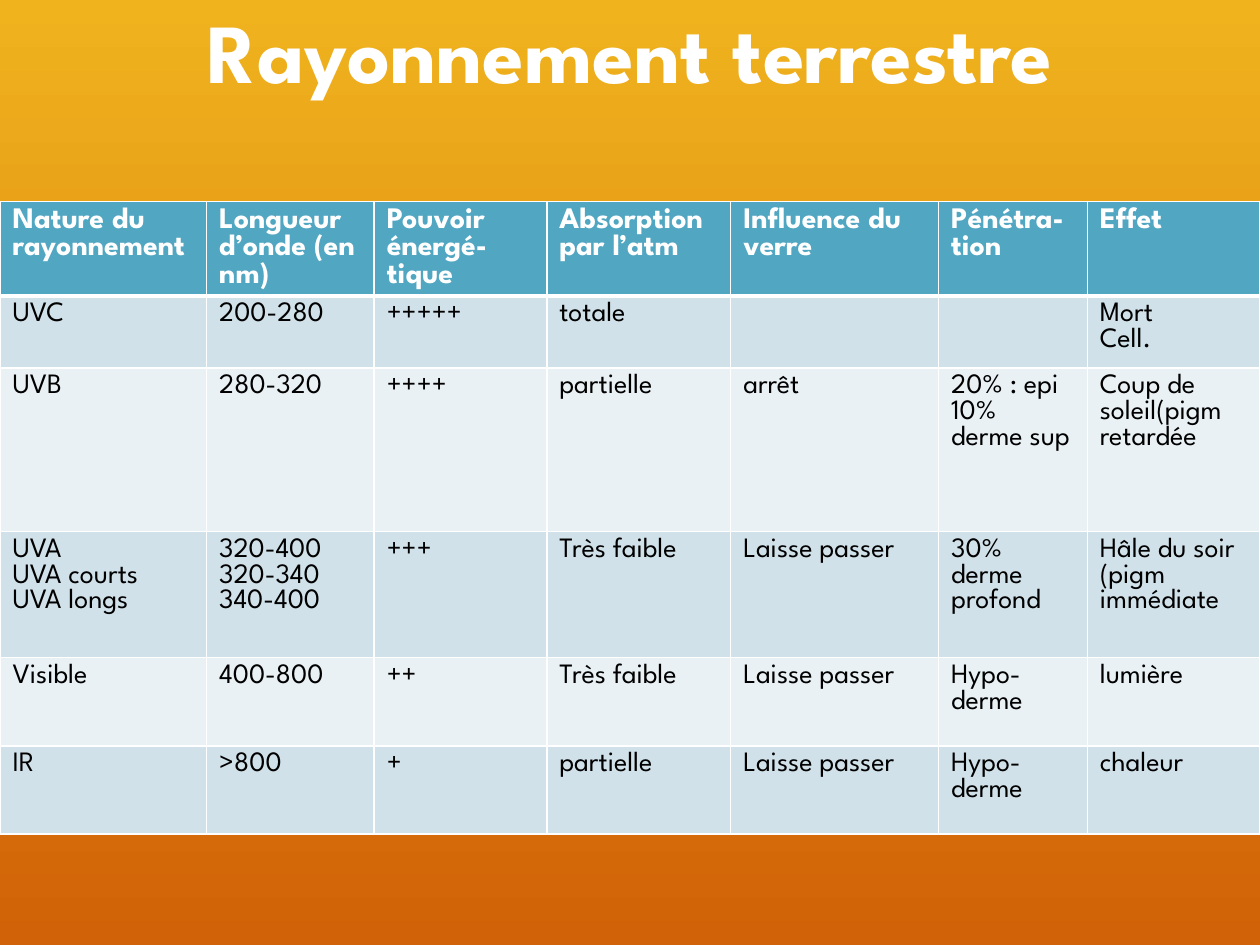
from dataclasses import dataclass

from lxml import etree
from pptx import Presentation
from pptx.dml.color import RGBColor
from pptx.enum.text import MSO_ANCHOR, PP_ALIGN
from pptx.oxml.ns import qn
from pptx.util import Emu, Inches, Pt

CENTER = PP_ALIGN.CENTER
MIDDLE = MSO_ANCHOR.MIDDLE
FONT = "League Spartan"
WHITE = "FFFFFF"
BLACK = "000000"
SKY_TOP, SKY_BOTTOM = "F0B31E", "D16207"
HEADER_FILL = "51A6C2"
BAND_FILLS = ("D0E1E9", "E9F1F4")
THIN, THICK = 1, 3
COLUMN_SHARES = (0.164, 0.133, 0.137, 0.146, 0.165, 0.118, 0.137)
HEADINGS = (
    "Nature du rayonnement", "Longueur d’onde (en nm)", "Pouvoir énergé-tique",
    "Absorption par l’atm", "Influence du verre", "Pénétra-tion", "Effet",
)


@dataclass(frozen=True)
class TextStyle:
    size: float
    color: str
    bold: bool


@dataclass(frozen=True)
class TableRow:
    height: float
    texts: tuple[str, ...]


TITLE = TextStyle(48, WHITE, True)
HEADING = TextStyle(17, WHITE, True)
BODY = TextStyle(16, BLACK, False)
ROWS = (
    TableRow(0.75, HEADINGS),
    TableRow(0.57, ("UVC", "200-280", "+++++", "totale", "", "", "Mort\nCell.")),
    TableRow(1.3, ("UVB", "280-320", "++++", "partielle", "arrêt",
                   "20% : epi\n10% derme sup", "Coup de soleil(pigm retardée")),
    TableRow(1, ("UVA\nUVA courts\nUVA longs", "320-400\n320-340\n340-400", "+++",
                 "Très faible", "Laisse passer", "30% derme profond",
                 "Hâle du soir (pigm immédiate")),
    TableRow(0.7, ("Visible", "400-800", "++", "Très faible", "Laisse passer",
                   "Hypo-derme", "lumière")),
    TableRow(0.7, ("IR", ">800", "+", "partielle", "Laisse passer",
                   "Hypo-derme", "chaleur")),
)


def rgb(value: str) -> RGBColor:
    return RGBColor.from_string(value)


def write(para, text: str, style: TextStyle) -> None:
    span = para.add_run()
    span.text = text
    span.font.name = FONT
    span.font.size = Pt(style.size)
    span.font.bold = style.bold
    span.font.color.rgb = rgb(style.color)


def paint_background(page) -> None:
    fill = page.background.fill
    fill.gradient()
    fill.gradient_angle = 270
    for stop, position, color in zip(fill.gradient_stops, (0, 1), (SKY_TOP, SKY_BOTTOM)):
        stop.position = position
        stop.color.rgb = rgb(color)


def draw_title(page, deck_width: int, deck_height: int) -> None:
    box = page.shapes.title
    box.left, box.top = Emu(int(deck_width * 0.085)), Emu(0)
    box.width, box.height = Emu(int(deck_width * 0.83)), Emu(int(deck_height * 0.115))
    box.text_frame.vertical_anchor = MIDDLE
    para = box.text_frame.paragraphs[0]
    para.alignment = CENTER
    para.line_spacing = 0.95
    write(para, "Rayonnement terrestre", TITLE)


def set_borders(cell, top: float, bottom: float) -> None:
    properties = cell._tc.get_or_add_tcPr()
    for side, width in (("L", THIN), ("R", THIN), ("T", top), ("B", bottom)):
        line = etree.SubElement(properties, qn(f"a:ln{side}"), w=str(Pt(width)))
        solid = etree.SubElement(line, qn("a:solidFill"))
        etree.SubElement(solid, qn("a:srgbClr"), val=WHITE)


def fill_cell(cell, text: str, row_index: int) -> None:
    is_header = row_index == 0
    set_borders(cell, THICK if row_index == 1 else THIN, THICK if is_header else THIN)
    cell.fill.solid()
    cell.fill.fore_color.rgb = rgb(HEADER_FILL if is_header else BAND_FILLS[(row_index - 1) % 2])
    frame = cell.text_frame
    for index, line in enumerate(text.split("\n") if text else ()):
        para = frame.add_paragraph() if index else frame.paragraphs[0]
        write(para, line, HEADING if is_header else BODY)


def draw_table(page, deck_width: int) -> None:
    height = Inches(sum(row.height for row in ROWS))
    table = page.shapes.add_table(
        len(ROWS), len(HEADINGS), 0, Inches(1.6), deck_width, height).table
    for column, share in zip(table.columns, COLUMN_SHARES):
        column.width = Emu(int(deck_width * share))
    for row_index, row in enumerate(ROWS):
        table.rows[row_index].height = Inches(row.height)
        for column_index, text in enumerate(row.texts):
            fill_cell(table.cell(row_index, column_index), text, row_index)


def main() -> None:
    """Build the slide on terrestrial radiation and save it."""
    deck = Presentation()
    deck.slide_width, deck.slide_height = Inches(10), Inches(7.5)
    page = deck.slides.add_slide(deck.slide_layouts[5])
    paint_background(page)
    draw_title(page, deck.slide_width, deck.slide_height)
    draw_table(page, deck.slide_width)
    deck.save("out.pptx")


if __name__ == "__main__":
    main()
